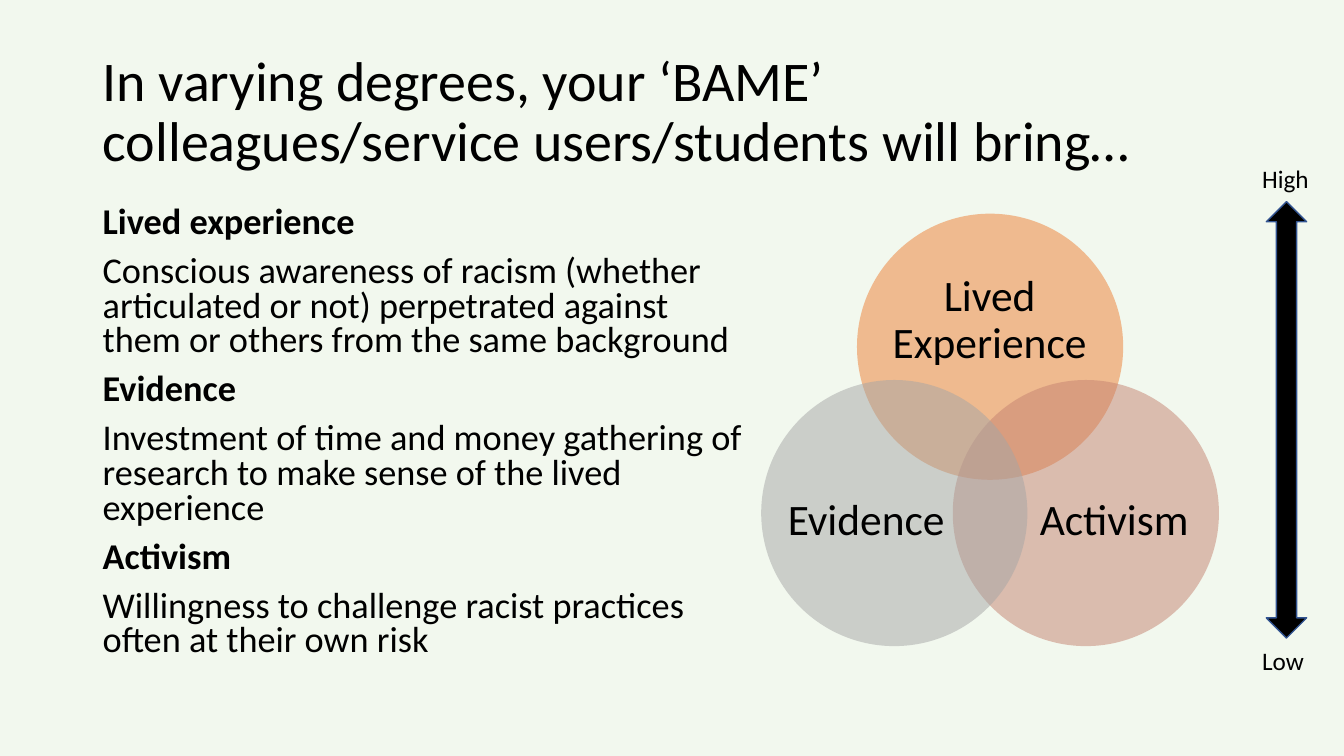
from lxml import etree
from pptx import Presentation
from pptx import util as u
from pptx.dml.color import RGBColor
from pptx.enum import shapes, text
from pptx.oxml.ns import qn


def paint(fill, color, opacity=100):
    fill.solid()
    fill.fore_color.rgb = RGBColor.from_string(color)
    if opacity < 100:
        tint = fill._xPr.find(qn("a:solidFill"))[0]
        etree.SubElement(tint, qn("a:alpha")).set("val", str(opacity * 1000))


def add_text(left, top, width, height, lines, size, spacing=1.0, centred=False, middle=False):
    box = page.shapes.add_textbox(*map(u.Inches, (left, top, width, height)))
    frame = box.text_frame
    frame.word_wrap = True
    if middle:
        frame.vertical_anchor = text.MSO_ANCHOR.MIDDLE
    if centred:
        frame.margin_left = frame.margin_right = frame.margin_top = frame.margin_bottom = 0
    frame.text = "\n".join(lines)
    for para in frame.paragraphs:
        para.line_spacing = spacing
        if centred:
            para.alignment = text.PP_ALIGN.CENTER
        para.font.name = "Calibri"
        para.font.size = u.Pt(size)
        paint(para.font.fill, "000000")
    return frame


deck = Presentation()
deck.slide_width = u.Inches(13.33)
deck.slide_height = u.Inches(7.5)
page = deck.slides.add_slide(deck.slide_layouts[6])
paint(page.background.fill, "F2F8EE")

title = "In varying degrees, your ‘BAME’ colleagues/service users/students will bring…"
add_text(0.92, 0.4, 11.5, 1.45, [title], 40, 0.9, middle=True)

themes = [
    "Lived experience",
    "Conscious awareness of racism (whether articulated or not) perpetrated against "
    "them or others from the same background",
    "Evidence",
    "Investment of time and money gathering of research to make sense of the lived experience",
    "Activism",
    "Willingness to challenge racist practices often at their own risk",
]
body = add_text(0.92, 2, 6.56, 4.76, themes, 25.9, 0.8)
for index, para in enumerate(body.paragraphs):
    para.font.bold = index % 2 == 0
    if index:
        para.space_before = u.Pt(10)

diameter = u.Inches(2.64)
circles = [
    ("Lived Experience", "ED7D31", 8.5, 2.12, (8.85, 2.59, 1.93, 1.19)),
    ("Activism", "C48170", 9.45, 3.77, (10.26, 4.45, 1.58, 1.45)),
    ("Evidence", "A5A5A5", 7.55, 3.77, (7.8, 4.45, 1.58, 1.45)),
]
for label, color, left, top, label_area in circles:
    circle = page.shapes.add_shape(
        shapes.MSO_SHAPE.OVAL, u.Inches(left), u.Inches(top), diameter, diameter)
    circle.shadow.inherit = False
    circle.line.fill.background()
    paint(circle.fill, color, 50)
    add_text(*label_area, [label], 31, 0.9, centred=True, middle=True)

scale = page.shapes.add_shape(
    shapes.MSO_SHAPE.UP_DOWN_ARROW, u.Inches(12.56), u.Inches(2), u.Inches(0.4), u.Inches(4.33))
scale.shadow.inherit = False
paint(scale.fill, "000000")
paint(scale.line.fill, "325491")
scale.line.width = u.Pt(1)

for label, top in (("High", 1.57), ("Low", 6.35)):
    add_text(12.42, top, 0.84, 0.4, [label], 18)

deck.save("out.pptx")
